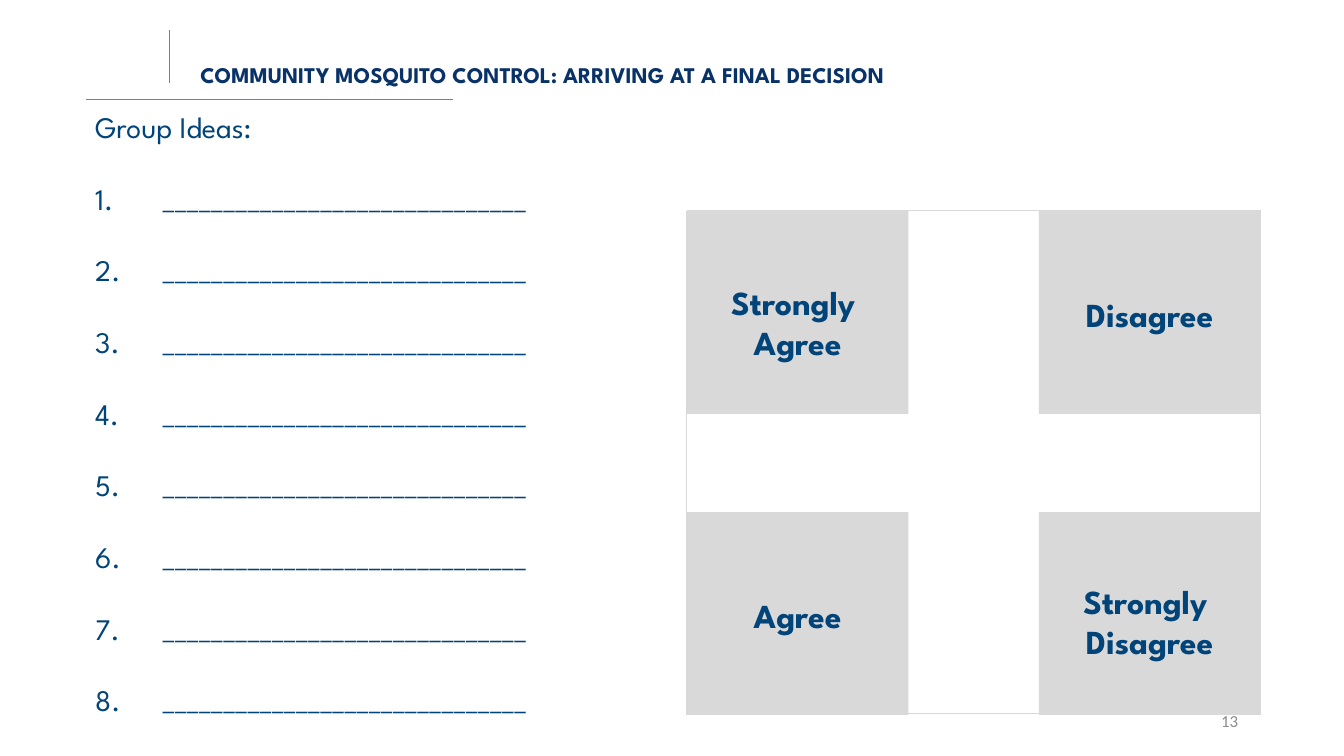
from lxml import etree
from pptx import Presentation
from pptx.dml.color import RGBColor
from pptx.enum.shapes import MSO_CONNECTOR, MSO_SHAPE
from pptx.enum.text import MSO_ANCHOR, MSO_AUTO_SIZE, PP_ALIGN
from pptx.oxml.ns import qn
from pptx.util import Inches, Pt

STRAIGHT, RECT = MSO_CONNECTOR.STRAIGHT, MSO_SHAPE.RECTANGLE
TOP, MIDDLE = MSO_ANCHOR.TOP, MSO_ANCHOR.MIDDLE
LEFT, CENTER, RIGHT = PP_ALIGN.LEFT, PP_ALIGN.CENTER, PP_ALIGN.RIGHT
NO_FIT = MSO_AUTO_SIZE.NONE
COLORS = {"title": "083268", "text": "004479", "panel": "D9D9D9",
          "rule": "7F7F7F", "number": "8C8C8C"}
TITLE = {"name": "League Spartan", "size": Pt(12), "bold": True}
IDEA = {"name": "League Spartan", "size": Pt(16), "bold": False}
LABEL = {"name": "League Spartan", "size": Pt(18), "bold": True}
NUMBER = {"name": "Calibri", "size": Pt(9), "bold": False}

prs = Presentation()
prs.slide_width = Inches(10)
prs.slide_height = Inches(10 * 9 / 16)
s = prs.slides.add_slide(prs.slide_layouts[5])


def write(p, text, style, color, align):
    p.alignment = align
    r = p.add_run()
    r.text = text
    for key, value in style.items():
        setattr(r.font, key, value)
    r.font.color.rgb = RGBColor.from_string(COLORS[color])


def add_line(x1, y1, x2, y2, color):
    line = s.shapes.add_connector(STRAIGHT, Inches(x1), Inches(y1), Inches(x2), Inches(y2))
    line.line.color.rgb = RGBColor.from_string(COLORS[color])
    line.line.width = Pt(0.5)
    etree.SubElement(line._element.spPr, qn("a:effectLst"))


add_line(0.64, 0.74, 3.37, 0.74, "rule")
add_line(1.26, 0.22, 1.26, 0.62, "rule")

title = s.shapes.title
title.left, title.top = Inches(1.39), Inches(0.43)
title.width, title.height = Inches(6.76), Inches(0.27)
tf = title.text_frame
tf.word_wrap, tf.vertical_anchor, tf.auto_size = True, TOP, NO_FIT
p = tf.paragraphs[0]
p.line_spacing = 0.9
write(p, "COMMUNITY MOSQUITO CONTROL: ARRIVING AT A FINAL DECISION", TITLE, "title", LEFT)

tf = s.shapes.add_textbox(Inches(0.61), Inches(0.76), Inches(4.51), Inches(5.22)).text_frame
tf.word_wrap = True
write(tf.paragraphs[0], "Group Ideas:", IDEA, "text", LEFT)
for i in range(8):
    p = tf.add_paragraph()
    p.space_before = Pt(19.2)
    pPr = p._p.get_or_add_pPr()
    pPr.set("marL", str(Inches(0.5)))
    pPr.set("indent", str(Inches(-0.5)))
    etree.SubElement(pPr, qn("a:buFont"), typeface="+mj-lt")
    etree.SubElement(pPr, qn("a:buAutoNum"), type="arabicPeriod")
    write(p, "_" * 30, IDEA, "text", LEFT)

x_left, x_right, y_top, y_bottom = 5.11, 9.38, 1.57, 5.32
panel_w, panel_h = 1.65, 1.51
answers = [
    (x_left, y_top, 2.05, ["Strongly ", "Agree"]),
    (x_right - panel_w, y_top, 2.14, ["Disagree"]),
    (x_left, y_bottom - panel_h, 4.38, ["Agree"]),
    (x_right - panel_w, y_bottom - panel_h, 4.27, ["Strongly ", "Disagree"]),
]
for x, y, label_y, words in answers:
    sp = s.shapes.add_shape(RECT, Inches(x), Inches(y), Inches(panel_w), Inches(panel_h))
    sp.shadow.inherit = False
    sp.fill.solid()
    sp.fill.fore_color.rgb = RGBColor.from_string(COLORS["panel"])
    sp.line.fill.background()
    label_h = 0.34 if len(words) == 1 else 0.57
    tf = s.shapes.add_textbox(Inches(x + 0.05), Inches(label_y),
                              Inches(panel_w - 0.1), Inches(label_h)).text_frame
    tf.word_wrap = True
    for i, word in enumerate(words):
        p = tf.add_paragraph() if i else tf.paragraphs[0]
        write(p, word, LABEL, "text", CENTER)

for y in (y_top, y_bottom - 0.01):
    add_line(x_left, y, x_right, y, "panel")
for x in (x_right, x_left):
    add_line(x, y_bottom, x, y_top, "panel")

tf = s.shapes.add_textbox(Inches(7.06), Inches(5.21), Inches(2.25), Inches(0.3)).text_frame
tf.word_wrap, tf.vertical_anchor = True, MIDDLE
write(tf.paragraphs[0], "13", NUMBER, "number", RIGHT)

prs.save("out.pptx")
